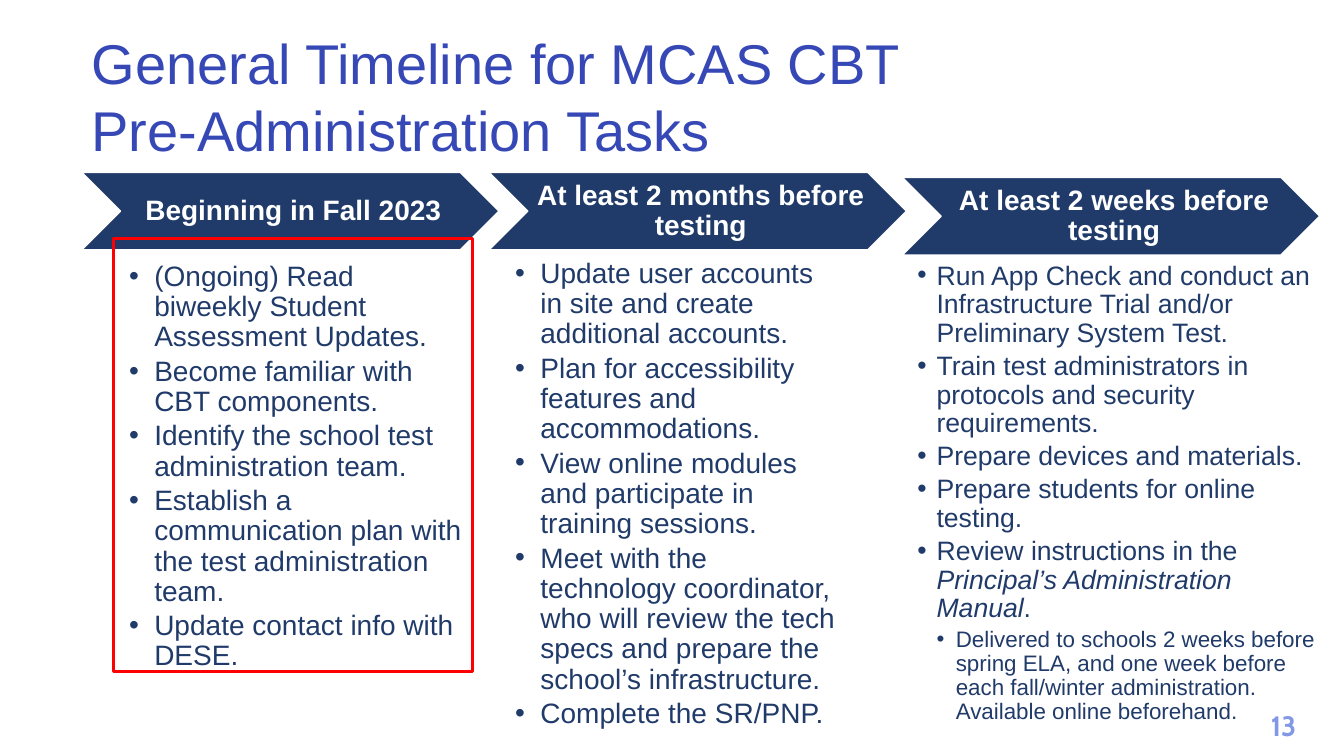
from pptx import Presentation
from pptx.dml.color import RGBColor
from pptx.enum.shapes import MSO_SHAPE
from pptx.enum.text import MSO_ANCHOR, PP_ALIGN
from pptx.oxml.ns import qn
from pptx.util import Inches, Pt
from lxml.etree import SubElement

COLORS = {"title": "3647B6", "navy": "203B6A", "white": "FFFFFF",
          "highlight": "FF0000", "number": "8397E7"}

# Each bullet is a list of (text, italic) runs; "\n" is a line break
STAGES = [
    {"heading": "Beginning in Fall 2023", "arrow": (0.81, 1.71),
     "list": (1.28, 2.6, 3.31, 5.09), "size": 20, "indent": 0.25,
     "bullets": [
         [("(Ongoing) Read biweekly Student Assessment Updates.", False)],
         [("Become familiar with CBT components.", False)],
         [("Identify the school test administration team.", False)],
         [("Establish a communication plan with the test administration team.", False)],
         [("Update contact info with DESE.", False)]],
     "details": []},
    {"heading": "At least 2 months before testing", "arrow": (4.85, 1.71),
     "list": (5.11, 2.57, 3.31, 5.09), "size": 20, "indent": 0.25,
     "bullets": [
         [("Update user accounts\nin site and create additional accounts.", False)],
         [("Plan for accessibility features and accommodations.", False)],
         [("View online modules and participate in training sessions.", False)],
         [("Meet with the technology coordinator, who will review the tech specs "
           "and prepare the school’s infrastructure.", False)],
         [("Complete the SR/PNP.", False)]],
     "details": []},
    {"heading": "At least 2 weeks before testing", "arrow": (8.95, 1.76),
     "list": (9.1, 2.6, 4.03, 5.09), "size": 19, "indent": 0.19,
     "bullets": [
         [("Run App Check and conduct an Infrastructure Trial and/or "
           "Preliminary System Test.", False)],
         [("Train test administrators in protocols and security requirements.", False)],
         [("Prepare devices and materials.", False)],
         [("Prepare students for online testing.", False)],
         [("Review instructions in the ", False),
          ("Principal’s Administration Manual", True), (".", False)]],
     "details": [
         [("Delivered to schools 2 weeks before spring ELA, and one week before each "
           "fall/winter administration. Available online beforehand.", False)]]},
]


def rgb(name):
    return RGBColor.from_string(COLORS[name])


def add_text_frame(s, box, insets=(0.1, 0.05, 0.1, 0.05)):
    tf = s.shapes.add_textbox(*map(Inches, box)).text_frame
    tf.word_wrap = True
    tf.margin_left, tf.margin_top, tf.margin_right, tf.margin_bottom = map(Inches, insets)
    return tf


def next_paragraph(tf):
    return tf.paragraphs[0] if not tf.paragraphs[0].runs else tf.add_paragraph()


def add_run(p, text, size, color, bold=False, italic=False, font="Arial"):
    for i, line in enumerate(text.split("\n")):
        if i:
            p.add_line_break()
        r = p.add_run()
        r.text = line
        r.font.name, r.font.size = font, Pt(size)
        r.font.bold, r.font.italic = bold, italic
        r.font.color.rgb = rgb(color)


def add_box(s, kind, box, fill, line, width):
    sp = s.shapes.add_shape(kind, *map(Inches, box))
    sp.shadow.inherit = False
    if fill:
        sp.fill.solid()
        sp.fill.fore_color.rgb = rgb(fill)
    else:
        sp.fill.background()
    sp.line.color.rgb = rgb(line)
    sp.line.width = Pt(width)


def add_title(s, box, lines):
    tf = add_text_frame(s, box)
    for line in lines:
        add_run(next_paragraph(tf), line, 40, "title")


def add_heading(s, left, top, text):
    add_box(s, MSO_SHAPE.CHEVRON, (left, top, 4.14, 0.77), "navy", "white", 1)
    tf = add_text_frame(s, (left + 0.38, top, 3.38, 0.77), (0.09, 0.03, 0.03, 0.03))
    tf.vertical_anchor = MSO_ANCHOR.MIDDLE
    p = tf.paragraphs[0]
    p.alignment = PP_ALIGN.CENTER
    p.line_spacing = 0.9
    add_run(p, text, 20, "white", bold=True)


def add_bullet(tf, runs, size, indent, level):
    p = next_paragraph(tf)
    p.level = level
    p.line_spacing = 0.9
    p.space_after = Pt(3)
    pPr = p._p.get_or_add_pPr()
    pPr.set("marL", str(Inches(indent * (level + 1))))
    pPr.set("indent", str(-Inches(indent)))
    SubElement(pPr, qn("a:buFont")).set("typeface", "Arial")
    SubElement(pPr, qn("a:buChar")).set("char", "•")
    for text, italic in runs:
        add_run(p, text, size, "navy", italic=italic)


def add_stage(s, stage):
    add_heading(s, *stage["arrow"], stage["heading"])
    tf = add_text_frame(s, stage["list"], (0, 0, 0, 0))
    for runs in stage["bullets"]:
        add_bullet(tf, runs, stage["size"], stage["indent"], 0)
    for runs in stage["details"]:
        add_bullet(tf, runs, 16, stage["indent"], 1)


def add_slide_number(s, box, number):
    p = add_text_frame(s, box).paragraphs[0]
    p.alignment = PP_ALIGN.CENTER
    add_run(p, number, 20, "number", bold=True, font="Cabin")


def main():
    prs = Presentation()
    prs.slide_width, prs.slide_height = Inches(13.33), Inches(7.5)
    s = prs.slides.add_slide(prs.slide_layouts[6])
    add_slide_number(s, (12.42, 6.98, 0.62, 0.44), "13")
    add_title(s, (0.81, 0.23, 12.8, 1.45),
              ["General Timeline for MCAS CBT", "Pre-Administration Tasks"])
    # Timeline stages
    for stage in STAGES:
        add_stage(s, stage)
    # Frame around the current stage
    add_box(s, MSO_SHAPE.RECTANGLE, (1.13, 2.37, 3.56, 4.29), None, "highlight", 2.25)
    prs.save("out.pptx")


if __name__ == "__main__":
    main()
